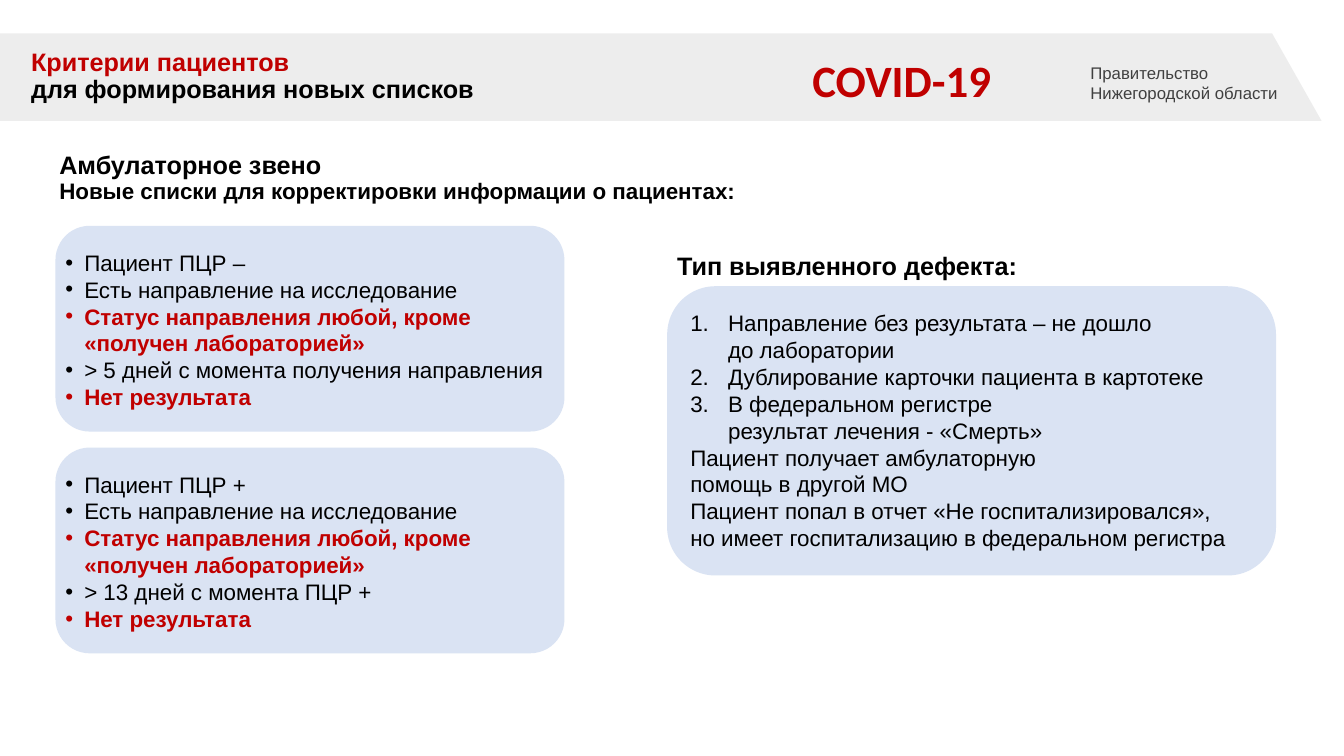
from dataclasses import dataclass

from lxml import etree
from pptx import Presentation
from pptx.dml.color import RGBColor
from pptx.enum.shapes import MSO_SHAPE
from pptx.oxml.ns import qn
from pptx.slide import Slide
from pptx.util import Pt

ROUND = MSO_SHAPE.ROUNDED_RECTANGLE


@dataclass(frozen=True)
class Theme:
    black: str = "000000"
    red: str = "C00000"
    gray: str = "404040"
    band: str = "D9D9D9"
    panel: str = "DAE3F3"
    font: str = "Arial"
    logo: str = "Calibri"
    small: int = 12
    body: int = 16
    head: int = 18
    big: int = 32


THEME = Theme()


@dataclass(frozen=True)
class Box:
    left: float
    top: float
    width: float
    height: float


@dataclass(frozen=True)
class Span:
    text: str
    size: int = THEME.body
    color: str = THEME.black
    bold: bool = False
    font: str = THEME.font


@dataclass(frozen=True)
class Line:
    """A paragraph; mark is a bullet sign, "1." for numbers, or empty."""
    spans: tuple[Span, ...]
    indent: float = 0
    mark: str = ""
    space: float = 1


def add_mark(para, line: Line) -> None:
    """Set the indent and the list mark of a paragraph."""
    props = para._p.get_or_add_pPr()
    props.set("marL", str(Pt(line.indent)))
    props.set("indent", str(Pt(-line.indent if line.mark else 0)))
    if line.mark == "1.":
        etree.SubElement(props, qn("a:buAutoNum"), type="arabicPeriod")
    elif line.mark:
        etree.SubElement(props, qn("a:buFont"), typeface=THEME.font)
        etree.SubElement(props, qn("a:buChar"), char=line.mark)
    else:
        etree.SubElement(props, qn("a:buNone"))


def add_text(slide: Slide, box: Box, lines: list[Line], wrap: bool = True) -> None:
    shape = slide.shapes.add_textbox(
        Pt(box.left), Pt(box.top), Pt(box.width), Pt(box.height))
    frame = shape.text_frame
    frame.word_wrap = wrap
    for i, line in enumerate(lines):
        para = frame.paragraphs[0] if i == 0 else frame.add_paragraph()
        add_mark(para, line)
        para.line_spacing = line.space
        for j, span in enumerate(line.spans):
            if j:
                para.add_line_break()
            for k, part in enumerate(span.text.split("\n")):
                if k:
                    para.add_line_break()
                run = para.add_run()
                run.text = part
                run.font.name = span.font
                run.font.size = Pt(span.size)
                run.font.bold = span.bold
                run.font.color.rgb = RGBColor.from_string(span.color)


def add_panel(slide: Slide, box: Box) -> None:
    shape = slide.shapes.add_shape(
        ROUND, Pt(box.left), Pt(box.top), Pt(box.width), Pt(box.height))
    shape.shadow.inherit = False
    shape.fill.solid()
    shape.fill.fore_color.rgb = RGBColor.from_string(THEME.panel)
    shape.line.fill.background()


def add_band(slide: Slide) -> None:
    """Draw the pale header band with its slanted right end."""
    path = slide.shapes.build_freeform(Pt(944), Pt(86.4))
    path.add_line_segments(
        [(Pt(908.6), Pt(23.8)), (Pt(-0.7), Pt(23.8)), (Pt(0), Pt(86.4))])
    band = path.convert_to_shape()
    band.shadow.inherit = False
    band.fill.solid()
    band.fill.fore_color.rgb = RGBColor.from_string(THEME.band)
    band.line.fill.background()
    color = band.element.spPr.find(qn("a:solidFill")).find(qn("a:srgbClr"))
    etree.SubElement(color, qn("a:alpha"), val="45000")


def heads(*spans: Span) -> list[Line]:
    return [Line(spans, space=0.9)]


def add_case(slide: Slide, top: float, test: str, days: str) -> None:
    """Draw one panel of patient criteria."""
    rows = [
        Span(test),
        Span("Есть направление на исследование"),
        Span("Статус направления любой, кроме\n«получен лабораторией»",
             color=THEME.red, bold=True),
        Span(days),
        Span("Нет результата", color=THEME.red, bold=True),
    ]
    add_panel(slide, Box(39.6, top, 363.6, 147))
    add_text(slide, Box(39.6, top + 13, 363.6, 124),
             [Line((row,), 13.5, "•") for row in rows])


def main() -> None:
    deck = Presentation()
    deck.slide_width, deck.slide_height = Pt(960), Pt(540)
    slide = deck.slides.add_slide(deck.slide_layouts[6])

    add_band(slide)
    add_text(slide, Box(771.8, 41, 153.4, 35.3), [Line((
        Span("Правительство Нижегородской области", THEME.small, THEME.gray),))])
    add_text(slide, Box(15.1, 31.7, 500.4, 46.8), heads(
        Span("Критерии пациентов", THEME.head, THEME.red, True),
        Span("для формирования новых списков", THEME.head, bold=True)))
    add_text(slide, Box(573.1, 33.8, 143.3, 46.1), [Line((
        Span("COVID-19", THEME.big, THEME.red, True, THEME.logo),))], wrap=False)
    add_text(slide, Box(35.3, 105.8, 508.3, 44.6), heads(
        Span("Амбулаторное звено", THEME.head, bold=True),
        Span("Новые списки для корректировки информации о пациентах:", bold=True)),
        wrap=False)

    cases = [
        ("Пациент ПЦР –", "> 5 дней с момента получения направления"),
        ("Пациент ПЦР +", "> 13 дней с момента ПЦР +"),
    ]
    for i, (test, days) in enumerate(cases):
        add_case(slide, 161.3 + i * 158.4, test, days)

    add_text(slide, Box(476.6, 177.8, 295.2, 26.6), heads(
        Span("Тип выявленного дефекта:", THEME.head, bold=True)))
    add_panel(slide, Box(476.6, 204.5, 434.9, 206.6))
    faults = [
        ("Направление без результата – не дошло\nдо лаборатории", 27, "1."),
        ("Дублирование карточки пациента в картотеке", 27, "1."),
        ("В федеральном регистре", 27, "1."),
        ("результат лечения - «Смерть»", 27, ""),
        ("Пациент получает амбулаторную\nпомощь в другой МО", 0, ""),
        ("Пациент попал в отчет «Не госпитализировался»,\n"
         "но имеет госпитализацию в федеральном регистра", 0, ""),
    ]
    add_text(slide, Box(486, 217.4, 441.4, 200.9),
             [Line((Span(text),), indent, mark) for text, indent, mark in faults])

    deck.save("out.pptx")


if __name__ == "__main__":
    main()
